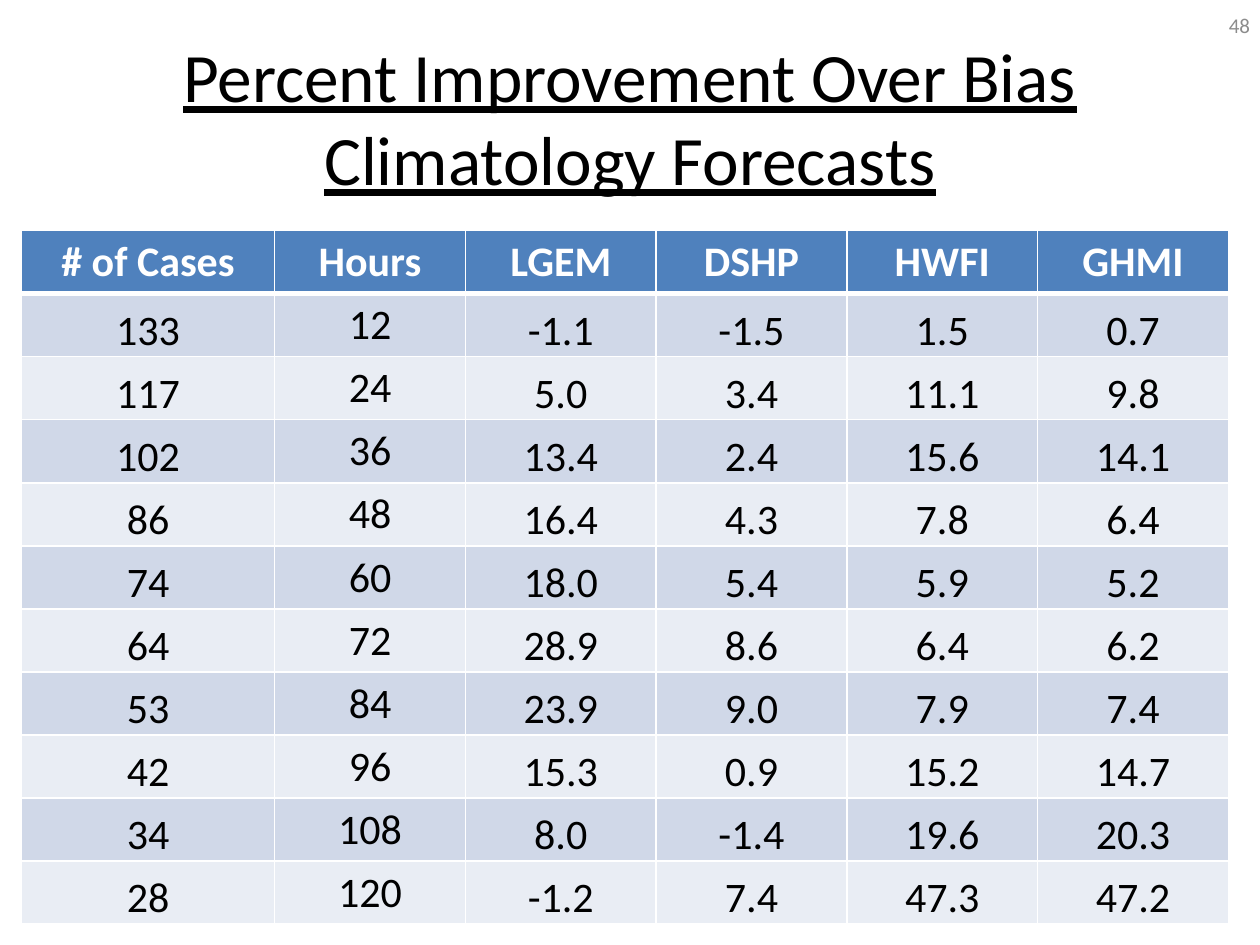
from lxml import etree
from pptx import Presentation
from pptx import util as u
from pptx.dml.color import RGBColor
from pptx.enum import text
from pptx.oxml.ns import qn

COLORS = {"ink": "000000", "white": "FFFFFF", "header": "4F81BD",
          "band": "D0D8E8", "light": "E9EDF4", "number": "8C8C8C"}
HEADERS = ["# of Cases", "Hours", "LGEM", "DSHP", "HWFI", "GHMI"]
ROWS = [
    ["133", "12", "-1.1", "-1.5", "1.5", "0.7"],
    ["117", "24", "5.0", "3.4", "11.1", "9.8"],
    ["102", "36", "13.4", "2.4", "15.6", "14.1"],
    ["86", "48", "16.4", "4.3", "7.8", "6.4"],
    ["74", "60", "18.0", "5.4", "5.9", "5.2"],
    ["64", "72", "28.9", "8.6", "6.4", "6.2"],
    ["53", "84", "23.9", "9.0", "7.9", "7.4"],
    ["42", "96", "15.3", "0.9", "15.2", "14.7"],
    ["34", "108", "8.0", "-1.4", "19.6", "20.3"],
    ["28", "120", "-1.2", "7.4", "47.3", "47.2"],
]


class SlideBuilder:
    """Holds the style and the current slide."""

    def __init__(self, slide, font="Calibri"):
        self.slide = slide
        self.font = font

    def paragraph(self, p, words, size, color, align, bold=False, underline=False):
        p.text = words
        p.alignment = align
        p.font.name = self.font
        p.font.size = u.Pt(size)
        p.font.bold = bold
        p.font.underline = underline
        p.font.color.rgb = RGBColor.from_string(COLORS[color])

    def text(self, box, words, size, color, align, **style):
        sp = self.slide.shapes.add_textbox(*map(u.Inches, box))
        tf = sp.text_frame
        tf.word_wrap = True
        tf.vertical_anchor = text.MSO_ANCHOR.MIDDLE
        self.paragraph(tf.paragraphs[0], words, size, color, align, **style)

    def borders(self, cell, **widths):
        tc_pr = cell._tc.get_or_add_tcPr()
        for i, side in enumerate("LRTB"):
            ln = etree.Element(qn(f"a:ln{side}"), w=str(u.Pt(widths.get(side, 1))))
            fill = etree.SubElement(ln, qn("a:solidFill"))
            etree.SubElement(fill, qn("a:srgbClr"), val=COLORS["white"])
            tc_pr.insert(i, ln)

    def cell(self, cell, words, fill, color, bold=False):
        cell.fill.solid()
        cell.fill.fore_color.rgb = RGBColor.from_string(COLORS[fill])
        self.paragraph(cell.text_frame.paragraphs[0], words, 24, color,
                       text.PP_ALIGN.CENTER, bold=bold)

    def table(self, box, headers, rows, first_width, header_height, row_height):
        table = self.slide.shapes.add_table(
            len(rows) + 1, len(headers), *map(u.Inches, box)).table
        other_width = (box[2] - first_width) / (len(headers) - 1)
        for c, column in enumerate(table.columns):
            column.width = u.Inches(other_width if c else first_width)
        for r, row in enumerate(table.rows):
            row.height = u.Inches(row_height if r else header_height)
        for c, words in enumerate(headers):
            cell = table.cell(0, c)
            self.cell(cell, words, "header", "white", bold=True)
            self.borders(cell, B=3)
        for r, values in enumerate(rows, 1):
            for c, words in enumerate(values):
                cell = table.cell(r, c)
                self.cell(cell, words, "band" if r % 2 else "light", "ink")
                self.borders(cell, T=3 if r == 1 else 1)
                if headers[c] != "Hours":
                    cell.vertical_anchor = text.MSO_ANCHOR.BOTTOM
                    cell.margin_left = cell.margin_right = u.Inches(0.01)
                    cell.margin_top = u.Inches(0.01)
                    cell.margin_bottom = 0


def main():
    prs = Presentation()
    prs.slide_width, prs.slide_height = u.Inches(10), u.Inches(7.5)
    s = SlideBuilder(prs.slides.add_slide(prs.slide_layouts[6]))
    s.text((0.5, 0.3, 9, 1.25), "Percent Improvement Over Bias Climatology Forecasts",
           39.6, "ink", text.PP_ALIGN.CENTER, underline=True)
    s.table((0.17, 1.83, 9.58, 5.5), HEADERS, ROWS,
            first_width=2.01, header_height=0.5, row_height=0.47)
    s.text((7.69, 0, 2.33, 0.4), "48", 12, "number", text.PP_ALIGN.RIGHT)
    prs.save("out.pptx")


if __name__ == "__main__":
    main()
